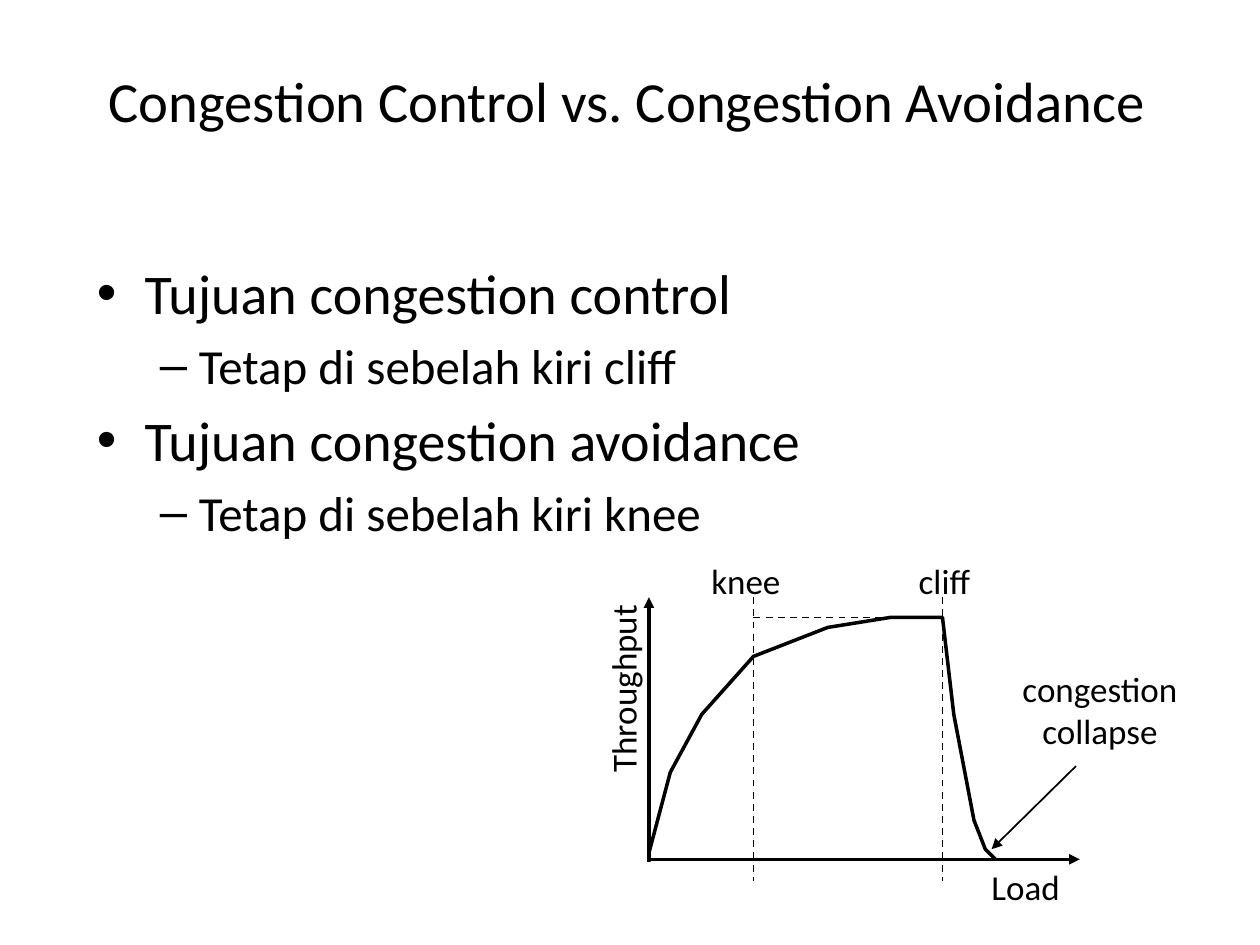
"""Build a slide on congestion control and congestion avoidance."""
import pptx
import pptx.util
import pptx.dml.color
import pptx.enum.dml
import pptx.enum.shapes
import pptx.enum.text
import pptx.oxml.ns
import lxml.etree

SCALE = 9144
BLACK = "000000"
FONT = "Calibri"
BULLETS = [
    (0, "Tujuan congestion control"),
    (1, "Tetap di sebelah kiri cliff"),
    (0, "Tujuan congestion avoidance"),
    (1, "Tetap di sebelah kiri knee"),
]
LEVELS = [("•", 32, 38, 38), ("–", 28, 81, 31)]
CURVE = [(0, 245), (0, 238), (17, 174), (42, 128), (83, 82), (142, 59),
         (192, 51), (233, 51), (242, 128), (258, 212), (267, 235), (275, 243)]
AXES = [(0, 243, 0, 35), (0, 243, 342, 243)]
GUIDES = [(233, 35, 233, 260), (83, 35, 83, 260), (83, 51, 233, 51)]
POINTER = (339, 169, 272, 235)
LABELS = [
    (["Load"], (258, 243, 82, 43), 0),
    (["Throughput"], (-102, 86, 162, 43), 270),
    (["knee"], (37, 0, 80, 43), 0),
    (["cliff"], (204, 0, 61, 43), 0),
    (["congestion", "collapse"], (281, 86, 154, 76), 0),
]


def px(num):
    """Turn px into EMU."""
    return pptx.util.Emu(num * SCALE)


def color(code):
    """Turn a hex string into a colour."""
    return pptx.dml.color.RGBColor.from_string(code)


def node(parent, tag, **attrs):
    """Append a drawing element to a parent."""
    return lxml.etree.SubElement(parent, pptx.oxml.ns.qn("a:" + tag), **attrs)


def write(para, text, size):
    """Add one styled run to a paragraph."""
    run = para.add_run()
    run.text = text
    run.font.name = FONT
    run.font.size = pptx.util.Pt(size)
    run.font.color.rgb = color(BLACK)


def rows(frame, count):
    """Return the given number of paragraphs in a frame."""
    return [frame.paragraphs[0]] + [frame.add_paragraph() for _ in range(count - 1)]


def title(slide, box, text):
    """Place the title."""
    shape = slide.shapes.title
    shape.left, shape.top, shape.width, shape.height = map(px, box)
    frame = shape.text_frame
    frame.vertical_anchor = pptx.enum.text.MSO_ANCHOR.MIDDLE
    frame.auto_size = pptx.enum.text.MSO_AUTO_SIZE.NONE
    para = frame.paragraphs[0]
    para.alignment = pptx.enum.text.PP_ALIGN.CENTER
    write(para, text, 32.4)


def body(slide, box):
    """Place the two-level bullet list."""
    frame = slide.shapes.add_textbox(*map(px, box)).text_frame
    frame.word_wrap = True
    for para, (level, text) in zip(rows(frame, len(BULLETS)), BULLETS):
        mark, size, left, hang = LEVELS[level]
        para.level = level
        para.space_before = pptx.util.Pt(size * 0.2)
        props = para._p.get_or_add_pPr()
        props.set("marL", str(px(left)))
        props.set("indent", str(-px(hang)))
        node(props, "buFont", typeface="Arial")
        node(props, "buChar", char=mark)
        write(para, text, size)


def line(group, spot, ends, width, dash=False, arrow=False):
    """Draw a straight line from a spot, with optional dashes or arrowhead."""
    left, top = spot
    x1, y1, x2, y2 = ends
    shape = group.shapes.add_connector(
        pptx.enum.shapes.MSO_CONNECTOR.STRAIGHT,
        px(left + x1), px(top + y1), px(left + x2), px(top + y2))
    shape.line.color.rgb = color(BLACK)
    shape.line.width = pptx.util.Pt(width)
    if dash:
        shape.line.dash_style = pptx.enum.dml.MSO_LINE.DASH
    if arrow:
        node(shape.line._get_or_add_ln(), "tailEnd", type="triangle")
    node(shape._element.spPr, "effectLst")


def curve(group, spot):
    """Draw the throughput curve."""
    left, top = spot
    dots = [(left + x, top + y) for x, y in CURVE]
    pen = group.shapes.build_freeform(*dots[0], scale=SCALE)
    pen.add_line_segments(dots[1:], close=False)
    shape = pen.convert_to_shape()
    shape.shadow.inherit = False
    shape.fill.background()
    shape.line.color.rgb = color(BLACK)
    shape.line.width = pptx.util.Pt(2)


def label(group, spot, texts, box, turn):
    """Place a centred label relative to a spot."""
    left, top = spot
    x, y, wide, high = box
    shape = group.shapes.add_textbox(px(left + x), px(top + y), px(wide), px(high))
    shape.rotation = turn
    frame = shape.text_frame
    frame.word_wrap = False
    frame.auto_size = pptx.enum.text.MSO_AUTO_SIZE.SHAPE_TO_FIT_TEXT
    for para, text in zip(rows(frame, len(texts)), texts):
        para.alignment = pptx.enum.text.PP_ALIGN.CENTER
        write(para, text, 20)


def graph(slide, spot):
    """Draw the load and throughput graph from its top left spot."""
    group = slide.shapes.add_group_shape()
    for ends in AXES:
        line(group, spot, ends, 2, arrow=True)
    curve(group, spot)
    for ends in GUIDES:
        line(group, spot, ends, 1, dash=True)
    for texts, box, turn in LABELS:
        label(group, spot, texts, box, turn)
    line(group, spot, POINTER, 1, arrow=True)


def main():
    """Build and save the slide."""
    deck = pptx.Presentation()
    deck.slide_width, deck.slide_height = px(1000), px(750)
    slide = deck.slides.add_slide(deck.slide_layouts[5])
    title(slide, (67, 33, 861, 92), "Congestion Control vs. Congestion Avoidance")
    body(slide, (67, 200, 783, 467))
    graph(slide, (515, 439))
    deck.save("out.pptx")


if __name__ == "__main__":
    main()
